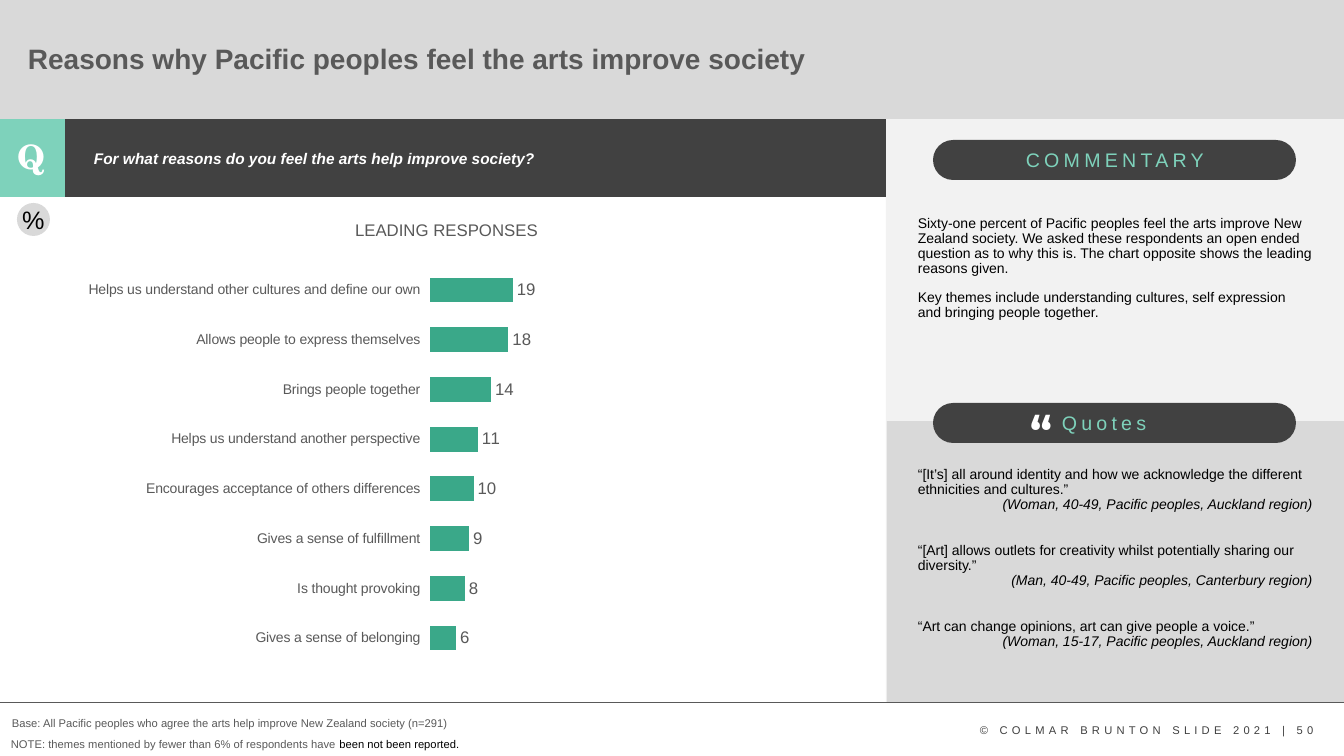
from pptx import Presentation
from pptx.chart.data import CategoryChartData
from pptx.dml.color import RGBColor
from pptx.enum.chart import XL_CHART_TYPE, XL_LABEL_POSITION as LABEL, XL_TICK_MARK as TICK
from pptx.enum.shapes import MSO_CONNECTOR, MSO_SHAPE as SHAPE
from pptx.enum.text import MSO_ANCHOR as ANCHOR, PP_ALIGN as ALIGN
from pptx.oxml import parse_xml
from pptx.oxml.ns import nsdecls, qn
from pptx.util import Pt
from lxml import etree

PX = 914400 / 100.8
GREY, PALE, DARK, TEXT = "D9D9D9", "F2F2F2", "414141", "595959"
MINT, GREEN, WHITE, BLACK = "7ED2BB", "3AA889", "FFFFFF", "000000"
rgb = RGBColor.from_string


def px(*lengths):
    return [round(n * PX) for n in lengths]


def write(sp, paras, size, color, name="Arial", spc=0, anchor=ANCHOR.TOP,
          inset=None, wrap=True, **para_format):
    """Each paragraph is a list of (text, font overrides) runs and a paragraph format."""
    tf = sp.text_frame
    tf.word_wrap, tf.vertical_anchor = wrap, anchor
    if inset is not None:
        for side in ("left", "top", "right", "bottom"):
            setattr(tf, f"margin_{side}", inset)
    for i, (runs, own_format) in enumerate(paras):
        p = tf.add_paragraph() if i else tf.paragraphs[0]
        for key, value in {**para_format, **own_format}.items():
            setattr(p, key, value)
        for text, font in runs:
            r = p.add_run()
            r.text = text
            values = {"size": Pt(size), "name": name, "color": color, **font}
            r.font.color.rgb = rgb(values.pop("color"))
            for key, value in values.items():
                setattr(r.font, key, value)
            if spc:
                r.font._element.set("spc", str(spc * 100))


prs = Presentation()
prs.slide_width, prs.slide_height = px(1344, 756)
s = prs.slides.add_slide(prs.slide_layouts[6])

# Bands, panels, pills and the percent badge
for kind, x, y, w, h, color in [
    (SHAPE.RECTANGLE, 0, 0, 1344, 119, GREY),
    (SHAPE.RECTANGLE, 886, 119, 458, 583, PALE),
    (SHAPE.RECTANGLE, 65, 119, 821, 78, DARK),
    (SHAPE.RECTANGLE, 0, 119, 65, 78, MINT),
    (SHAPE.RECTANGLE, 887, 421, 457, 281, GREY),
    (SHAPE.ROUNDED_RECTANGLE, 933, 140, 363, 40, DARK),
    (SHAPE.ROUNDED_RECTANGLE, 933, 403, 363, 40, DARK),
    (SHAPE.OVAL, 17, 203, 33, 33, GREY),
]:
    sp = s.shapes.add_shape(kind, *px(x, y, w, h))
    sp.shadow.inherit = False
    sp.fill.solid()
    sp.fill.fore_color.rgb = rgb(color)
    sp.line.fill.background()
    if kind == SHAPE.ROUNDED_RECTANGLE:
        sp.adjustments[0] = 0.5
write(sp, [([("%", {})], {})], 18, BLACK, anchor=ANCHOR.MIDDLE, inset=0,
      alignment=ALIGN.CENTER)

# Footer rule
rule = s.shapes.add_connector(MSO_CONNECTOR.STRAIGHT, *px(0, 702, 1344, 702))
rule.line.color.rgb = rgb(TEXT)
rule.line.width = Pt(0.5)
etree.SubElement(rule._element.spPr, qn("a:effectLst"))

# Single-line texts
for x, y, w, h, runs, style in [
    (18, 21, 1128, 79,
     [("Reasons why Pacific peoples feel the arts improve society", {"bold": True})],
     {"size": 20, "color": TEXT, "anchor": ANCHOR.MIDDLE, "line_spacing": 0.9}),
    (84, 146, 766, 46,
     [("For what reasons do you feel the arts help improve society?",
       {"bold": True, "italic": True})],
     {"size": 11, "color": WHITE, "line_spacing": 0.9}),
    (8, 131, 47, 50, [("Q", {"bold": True})],
     {"size": 24, "color": WHITE, "name": "TeX Gyre Schola", "alignment": ALIGN.CENTER}),
    (1016, 143, 204, 34, [("COMMENTARY", {})],
     {"size": 14, "color": MINT, "spc": 3, "wrap": False}),
    (1052, 406, 110, 34, [("Quotes", {})],
     {"size": 14, "color": MINT, "spc": 3, "wrap": False}),
    (1030, 420, 77, 32, [("“", {"bold": True})],
     {"size": 32, "color": WHITE, "name": "Montserrat", "spc": 3,
      "anchor": ANCHOR.MIDDLE, "inset": 0, "line_spacing": 0.8}),
    (300, 215, 293, 30, [("LEADING RESPONSES", {})],
     {"size": 12, "color": TEXT, "alignment": ALIGN.CENTER}),
    (2, 711, 721, 24,
     [("Base: All Pacific peoples who agree the arts help improve New Zealand society (n=291)", {})],
     {"size": 8, "color": TEXT}),
    (1, 732, 721, 24,
     [("NOTE: themes mentioned by fewer than 6% of respondents have ", {}),
      ("been not been reported.", {"color": BLACK})],
     {"size": 8, "color": TEXT}),
    (970, 718, 364, 24, [("© COLMAR BRUNTON SLIDE 2021 | 50", {})],
     {"size": 8, "color": "404040", "spc": 3}),
]:
    write(s.shapes.add_textbox(*px(x, y, w, h)), [(runs, {})], **style)

# Commentary
commentary = [
    "Sixty-one percent of Pacific peoples feel the arts improve New Zealand society. "
    "We asked these respondents an open ended question as to why this is. "
    "The chart opposite shows the leading reasons given.",
    "Key themes include understanding cultures, self expression and bringing people together.",
]
paras = [([(text, {})], {"space_before": Pt(10 if i else 0)})
         for i, text in enumerate(commentary)]
write(s.shapes.add_textbox(*px(908, 211, 414, 130)), paras, 10, BLACK, line_spacing=0.9)

# Quotes, each followed by its speaker
quotes = [
    ("“[It’s] all around identity and how we acknowledge the different ethnicities and cultures.”",
     "(Woman, 40-49, Pacific peoples, Auckland region)"),
    ("“[Art] allows outlets for creativity whilst potentially sharing our diversity.”",
     "(Man, 40-49, Pacific peoples, Canterbury region)"),
    ("“Art can change opinions, art can give people a voice.”",
     "(Woman, 15-17, Pacific peoples, Auckland region)"),
]
paras = []
for i, (quote, speaker) in enumerate(quotes):
    paras.append(([(quote, {})], {"space_before": Pt(22 if i else 0)}))
    paras.append(([(speaker, {"italic": True})], {"alignment": ALIGN.RIGHT}))
write(s.shapes.add_textbox(*px(908, 462, 414, 236)), paras, 10, BLACK, line_spacing=0.9)

# Bar chart
data = CategoryChartData()
data.categories = [
    "Helps us understand other cultures and define our own",
    "Allows people to express themselves",
    "Brings people together",
    "Helps us understand another perspective",
    "Encourages acceptance of others differences",
    "Gives a sense of fulfillment",
    "Is thought provoking",
    "Gives a sense of belonging",
]
data.add_series("Series 1", [19, 18, 14, 11, 10, 9, 8, 6])
chart = s.shapes.add_chart(XL_CHART_TYPE.BAR_CLUSTERED, *px(18, 246, 848, 417), data).chart
chart.has_legend = chart.has_title = False

cat, val = chart.category_axis, chart.value_axis
cat.reverse_order = True
cat.major_tick_mark = TICK.OUTSIDE
cat.format.line.fill.background()
val.minimum_scale, val.maximum_scale = 0, 100
val.has_major_gridlines = val.visible = False

plot = chart.plots[0]
plot.gap_width = 100
plot.vary_by_categories = False
fill = plot.series[0].format.fill
fill.solid()
fill.fore_color.rgb = rgb(GREEN)
plot.has_data_labels = True
labels = plot.data_labels
labels.show_value = True
labels.position = LABEL.OUTSIDE_END
for font, size, color in [(chart.font, 10, BLACK), (cat.tick_labels.font, 10, TEXT),
                          (labels.font, 12, TEXT)]:
    font.name, font.size = "Arial", Pt(size)
    font.color.rgb = rgb(color)

# Fixed inner plot area
area = chart._chartSpace.chart.plotArea
for layout in area.findall(qn("c:layout")):
    area.remove(layout)
area.insert(0, parse_xml(
    f'<c:layout {nsdecls("c")}><c:manualLayout><c:layoutTarget val="inner"/>'
    '<c:xMode val="edge"/><c:yMode val="edge"/><c:x val="0.486"/><c:y val="0.046"/>'
    '<c:w val="0.514"/><c:h val="0.954"/></c:manualLayout></c:layout>'))

prs.save("out.pptx")
